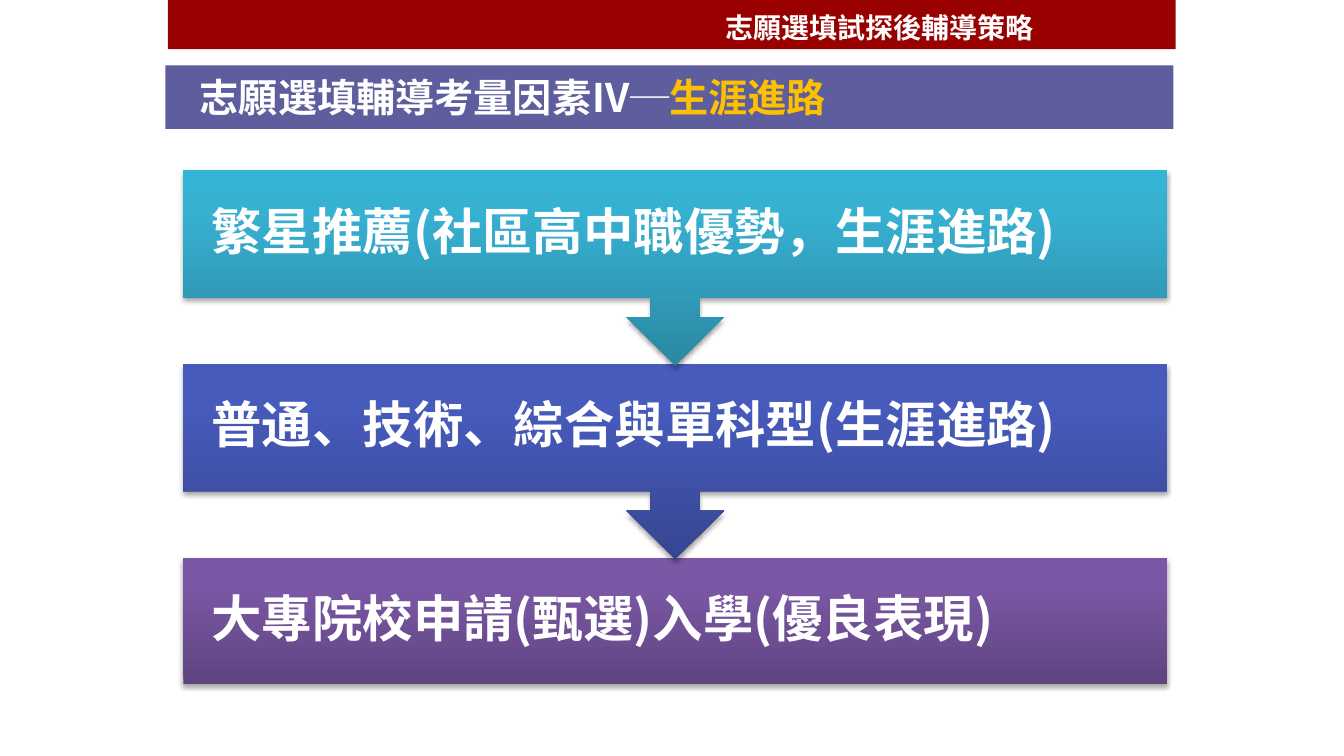
from lxml.etree import SubElement as Sub
from pptx import Presentation
from pptx.dml.color import RGBColor
from pptx.enum.shapes import MSO_SHAPE as Kind
from pptx.enum.text import MSO_ANCHOR as Anchor, MSO_AUTO_SIZE as Auto, PP_ALIGN as Align
from pptx.oxml.ns import qn
from pptx.util import Cm, Pt

FONT = "Noto Sans CJK SC"
STEPS = [
    ("繁星推薦(社區高中職優勢，生涯進路)", ("2A88A2", "37B1D2", "34B4D6")),
    ("普通、技術、綜合與單科型(生涯進路)", ("374691", "475BBC", "455ABF")),
    ("大專院校申請(甄選)入學(優良表現)", ("5F4480", "7B58A6", "7C57A8")),
]


def rgb(code):
    return RGBColor.from_string(code)


def place(shape, box):
    shape.left, shape.top, shape.width, shape.height = (Cm(n) for n in box)


def style(run, size, color="FFFFFF"):
    font = run.font
    font.name, font.size, font.bold = FONT, Pt(size), True
    font.color.rgb = rgb(color)
    Sub(run._r.get_or_add_rPr(), qn("a:ea"), typeface=FONT)


def add_bar(shapes, box, color):
    bar = shapes.add_shape(Kind.RECTANGLE, *(Cm(n) for n in box))
    bar.shadow.inherit = False
    bar.fill.solid()
    bar.fill.fore_color.rgb = rgb(color)
    bar.line.fill.background()
    return bar


def add_label(shapes, box, text, size):
    label = shapes.add_textbox(*(Cm(n) for n in box))
    frame = label.text_frame
    frame.word_wrap = True
    frame.text = text
    style(frame.paragraphs[0].runs[0], size)
    return frame


def shade(shape, colors):
    """Fill with a gradient that runs upwards, whatever the rotation."""
    props = shape._element.spPr
    grad = Sub(props, qn("a:gradFill"), rotWithShape="0")
    stops = Sub(grad, qn("a:gsLst"))
    for pos, color in zip((0, 80000, 100000), colors):
        stop = Sub(stops, qn("a:gs"), pos=str(pos))
        Sub(stop, qn("a:srgbClr"), val=color)
    Sub(grad, qn("a:lin"), ang="16200000", scaled="0")
    shape.line.fill.background()
    shape.shadow.inherit = False
    glow = Sub(props.find(qn("a:effectLst")), qn("a:outerShdw"), blurRad="40000",
               dist="23000", dir="5400000", rotWithShape="0")
    black = Sub(glow, qn("a:srgbClr"), val="000000")
    Sub(black, qn("a:alpha"), val="35000")


def add_banner(slide, box):
    left, top, width, height = box
    add_bar(slide.shapes, box, "990000")
    frame = add_label(slide.shapes, (left + 13.8, top + 0.13, 12.09, 1.12),
                      "志願選填試探後輔導策略", 20)
    frame.auto_size = Auto.SHAPE_TO_FIT_TEXT


def add_title(slide, box):
    left, top, width, height = box
    bar = add_bar(slide.shapes, box, "000066")
    color = bar._element.spPr.find(".//" + qn("a:srgbClr"))
    Sub(color, qn("a:alpha"), val="63000")
    title = slide.shapes.title
    slide.shapes._spTree.append(title._element)
    place(title, (left + 0.61, top + 0.08, 24.82, 1.45))
    frame = title.text_frame
    frame.word_wrap = True
    frame.auto_size = Auto.SHAPE_TO_FIT_TEXT
    frame.vertical_anchor = Anchor.TOP
    line = frame.paragraphs[0]
    line.alignment = Align.LEFT
    props = line._p.get_or_add_pPr()
    props.set("marL", str(Cm(0.46)))
    props.set("indent", str(-Cm(0.46)))
    for text, color in (("志願選填輔導考量因素Ⅳ─", "FFFFFF"), ("生涯進路", "FFC000")):
        run = line.add_run()
        run.text = text
        style(run, 28, color)


def add_step(shapes, box, text, colors, last):
    left, top, width, height = box
    kind = Kind.RECTANGLE if last else Kind.UP_ARROW_CALLOUT
    tall = height if last else height + 1.73
    step = shapes.add_shape(kind, Cm(left), Cm(top), Cm(width), Cm(tall))
    step.rotation = 0 if last else 180
    shade(step, colors)
    frame = add_label(shapes, box, text, 36)
    frame.vertical_anchor = Anchor.MIDDLE
    frame.margin_left = frame.margin_right = Cm(0.71)
    frame.margin_top = frame.margin_bottom = Cm(0.71)
    line = frame.paragraphs[0]
    line.line_spacing = 0.9
    line.space_after = Pt(12.6)


def add_flow(slide, box):
    """Stack the steps from the bottom up, so each arrow tip lies on the next."""
    left, top, width, height = box
    tall = 3.2
    pitch = (height - tall) / (len(STEPS) - 1)
    group = slide.shapes.add_group_shape()
    for row, (text, colors) in reversed(list(enumerate(STEPS))):
        add_step(group.shapes, (left, top + row * pitch, width, tall),
                 text, colors, row == len(STEPS) - 1)


def main():
    deck = Presentation()
    deck.slide_width, deck.slide_height = Cm(33.87), Cm(19.05)
    slide = deck.slides.add_slide(deck.slide_layouts[5])
    add_title(slide, (4.17, 1.65, 25.4, 1.6))
    add_flow(slide, (4.62, 4.29, 24.79, 12.96))
    add_banner(slide, (4.23, 0, 25.4, 1.24))
    deck.save("out.pptx")


if __name__ == "__main__":
    main()
